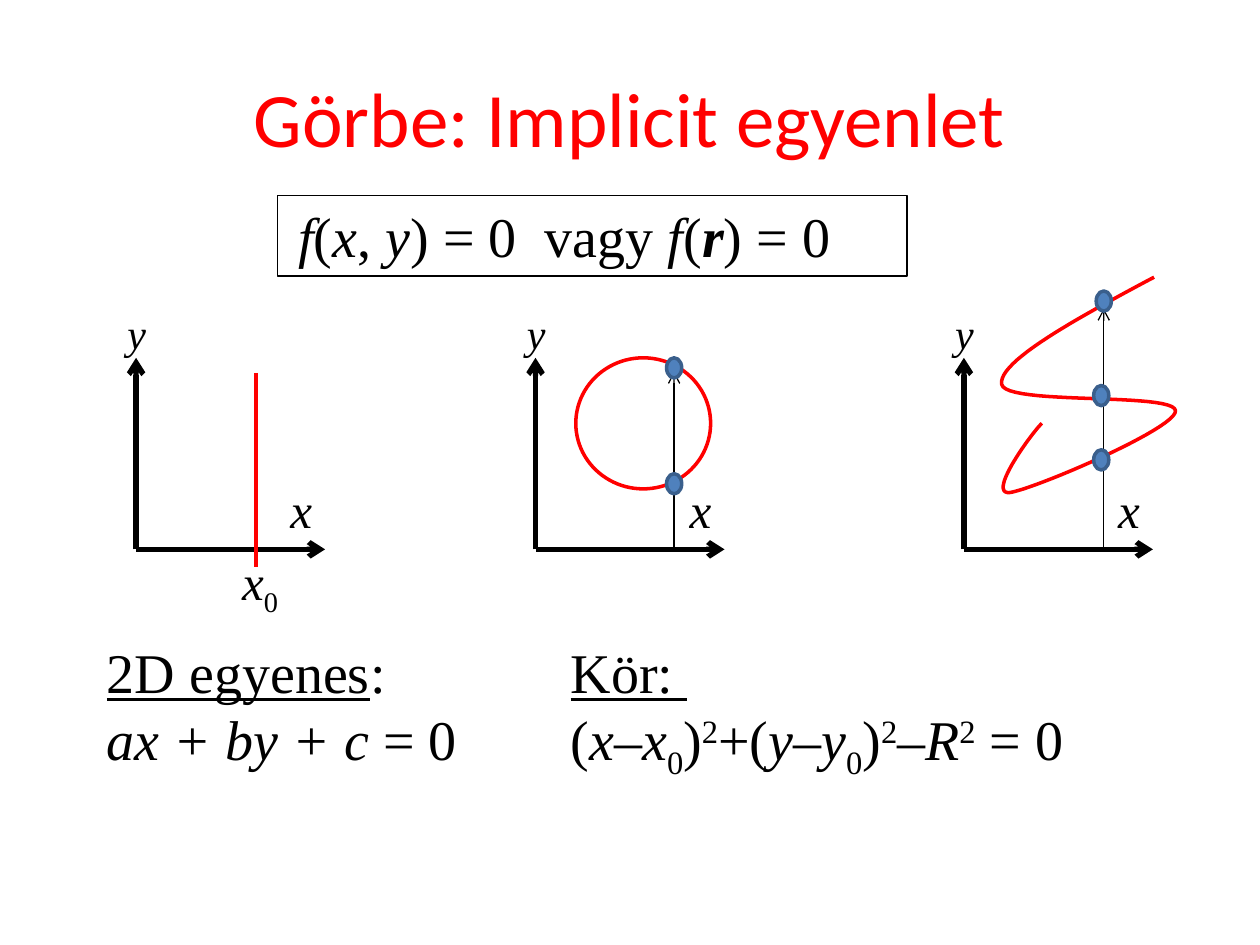
from typing import NamedTuple

from lxml.etree import SubElement
from pptx import Presentation
from pptx.dml.color import RGBColor
from pptx.enum.shapes import MSO_CONNECTOR, MSO_SHAPE
from pptx.enum.text import MSO_ANCHOR, MSO_AUTO_SIZE, PP_ALIGN
from pptx.oxml.ns import qn
from pptx.util import Inches, Pt

HUES = {"ink": "000000", "red": "FF0000", "dot": "4F81BD", "rim": "3A5F8C"}
COLS, ROWS = 100, 75  # square grid cells of a tenth of an inch
CELL = Inches(0.1)
SERIF = "Times New Roman"
BASE = 43.6  # row of the x axes


class Box(NamedTuple):
    x: float
    y: float
    w: float
    h: float


class Run(NamedTuple):
    text: str
    style: str = ""  # b bold, i italic, u underline, ^ raised, _ lowered


class Plot(NamedTuple):
    left: float
    dots: tuple[tuple[float, float], ...] = ()
    ray: tuple[float, float] | None = None  # column and top row


PLOTS = (
    Plot(10.8),
    Plot(42.5, ((53.5, 38.4), (53.5, 29.2)), (53.5, 29.5)),
    Plot(76.5, ((87.6, 23.9), (87.4, 31.4), (87.4, 36.5)), (87.6, 24.5)),
)
CURVE = (
    ((82.7, 33.6), (82.1, 34.1), (78.3, 39.2), (80.1, 39.1)),
    ((80.1, 39.1), (81.9, 38.9), (93.4, 34), (93.3, 32.6)),
    ((93.3, 32.6), (93.2, 31.1), (79.8, 32.2), (79.5, 30.5)),
    ((79.5, 30.5), (79.2, 28.7), (85.4, 25.3), (91.6, 22)),
)

deck = Presentation()
deck.slide_width, deck.slide_height = COLS * CELL, ROWS * CELL
slide = deck.slides.add_slide(deck.slide_layouts[5])
shapes = slide.shapes


def span(n: float) -> int:
    return round(n * CELL)


def hue(name: str) -> RGBColor:
    return RGBColor.from_string(HUES[name])


def write(frame, *paras: list[Run], size: int, font: str = SERIF, color: str = "ink",
          align=PP_ALIGN.LEFT, wrap: bool = True, grow: bool = True) -> None:
    frame.word_wrap = wrap
    frame.auto_size = MSO_AUTO_SIZE.SHAPE_TO_FIT_TEXT if grow else MSO_AUTO_SIZE.NONE
    for n, runs in enumerate(paras):
        para = frame.add_paragraph() if n else frame.paragraphs[0]
        para.alignment = align
        for text, style in runs:
            run = para.add_run()
            run.text = text
            face = run.font
            face.size, face.name, face.color.rgb = Pt(size), font, hue(color)
            face.bold, face.italic, face.underline = (k in style for k in "biu")
            for mark, shift in (("^", 30000), ("_", -25000)):
                if mark in style:
                    run._r.get_or_add_rPr().set("baseline", str(shift))


def label(box: Box, *paras: list[Run], **form):
    shape = shapes.add_textbox(*map(span, box))
    write(shape.text_frame, *paras, **form)
    return shape


def mark(box: Box, runs: list[Run], size: int = 28) -> None:
    """Place a short centred label at an axis."""
    label(box, runs, size=size, align=PP_ALIGN.CENTER, wrap=False)


def line(start: tuple, end: tuple, width: float, color: str = "ink",
         arrow: bool = True) -> None:
    link = shapes.add_connector(MSO_CONNECTOR.STRAIGHT, *map(span, (*start, *end)))
    link.line.width, link.line.color.rgb = Pt(width), hue(color)
    if arrow:
        SubElement(link.line._get_or_add_ln(), qn("a:tailEnd"), type="arrow")
    SubElement(link._element.spPr, qn("a:effectLst"))


def trim(shape, color: str, width: float = 2, fill: str | None = None) -> None:
    """Set outline and fill, without a shadow."""
    shape.shadow.inherit = False
    shape.line.width, shape.line.color.rgb = Pt(width), hue(color)
    if fill:
        shape.fill.solid()
        shape.fill.fore_color.rgb = hue(fill)
    else:
        shape.fill.background()


def oval(box: Box, color: str, fill: str | None = None) -> None:
    trim(shapes.add_shape(MSO_SHAPE.OVAL, *map(span, box)), color, fill=fill)


def axes(plot: Plot) -> None:
    left = plot.left
    line((left, BASE), (left + 15, BASE), 3)
    line((left, BASE), (left, BASE - 15.2), 3)
    mark(Box(left + 11.2, BASE - 6, 3.8, 5.7), [Run("x", "i")])
    mark(Box(left - 1.7, BASE - 19.7, 3.5, 5), [Run("y", "i")], 24)
    if plot.ray:
        col, top = plot.ray
        line((col, BASE), (col, top), 0.75)


def sweep(parts: tuple, steps: int = 24) -> None:
    """Draw joined cubic Bezier parts as one open outline."""
    spots = []
    for part in parts:
        for n in range(1, steps + 1):
            t = n / steps
            shares = ((1 - t) ** 3, 3 * t * (1 - t) ** 2, 3 * t * t * (1 - t), t ** 3)
            spots.append(tuple(span(sum(s * p[k] for s, p in zip(shares, part)))
                               for k in (0, 1)))
    pen = shapes.build_freeform(*map(span, parts[0][0]))
    pen.add_line_segments(spots, close=False)
    trim(pen.convert_to_shape(), "red")


title = shapes.title
title.left, title.top, title.width, title.height = map(span, Box(5, 3, 90, 12.5))
title.text_frame.vertical_anchor = MSO_ANCHOR.MIDDLE
write(title.text_frame, [Run("Görbe: Implicit egyenlet")], size=44, font="Calibri",
      color="red", align=PP_ALIGN.CENTER, grow=False)

rule = label(
    Box(22, 15.5, 50, 6.4),
    [Run("f", "i"), Run("("), Run("x", "i"), Run(", "), Run("y", "i"),
     Run(") = 0  vagy "), Run("f", "i"), Run("("), Run("r", "bi"), Run(") = 0")],
    size=32, align=PP_ALIGN.CENTER)
rule.text_frame.margin_right = span(5.4)
rule.line.width, rule.line.color.rgb = Pt(0.75), hue("ink")

for plot in PLOTS:
    axes(plot)
line((20.3, 29.6), (20.3, 45), 2.25, "red", arrow=False)
oval(Box(45.7, 28.4, 10.7, 10.4), "red")
sweep(CURVE)
for plot in PLOTS:
    for col, row in plot.dots:
        oval(Box(col - 0.6, row - 0.8, 1.2, 1.6), "rim", "dot")
mark(Box(18.1, 43.3, 5.1, 5.7), [Run("x", "i"), Run("0", "_")])

label(Box(7.5, 50.1, 31.5, 11.8),
      [Run("2D egyenes", "u"), Run(":")],
      [Run("ax + by + c", "i"), Run(" = 0")], size=32)
label(Box(44.3, 50.1, 48.2, 11.8),
      [Run("Kör: ", "u")],
      [Run("("), Run("x–x", "i"), Run("0", "_"), Run(")"), Run("2", "^"),
       Run("+("), Run("y–y", "i"), Run("0", "_"), Run(")"), Run("2", "^"),
       Run("–"), Run("R", "i"), Run("2", "^"), Run(" = 0")], size=32)

deck.save("out.pptx")
